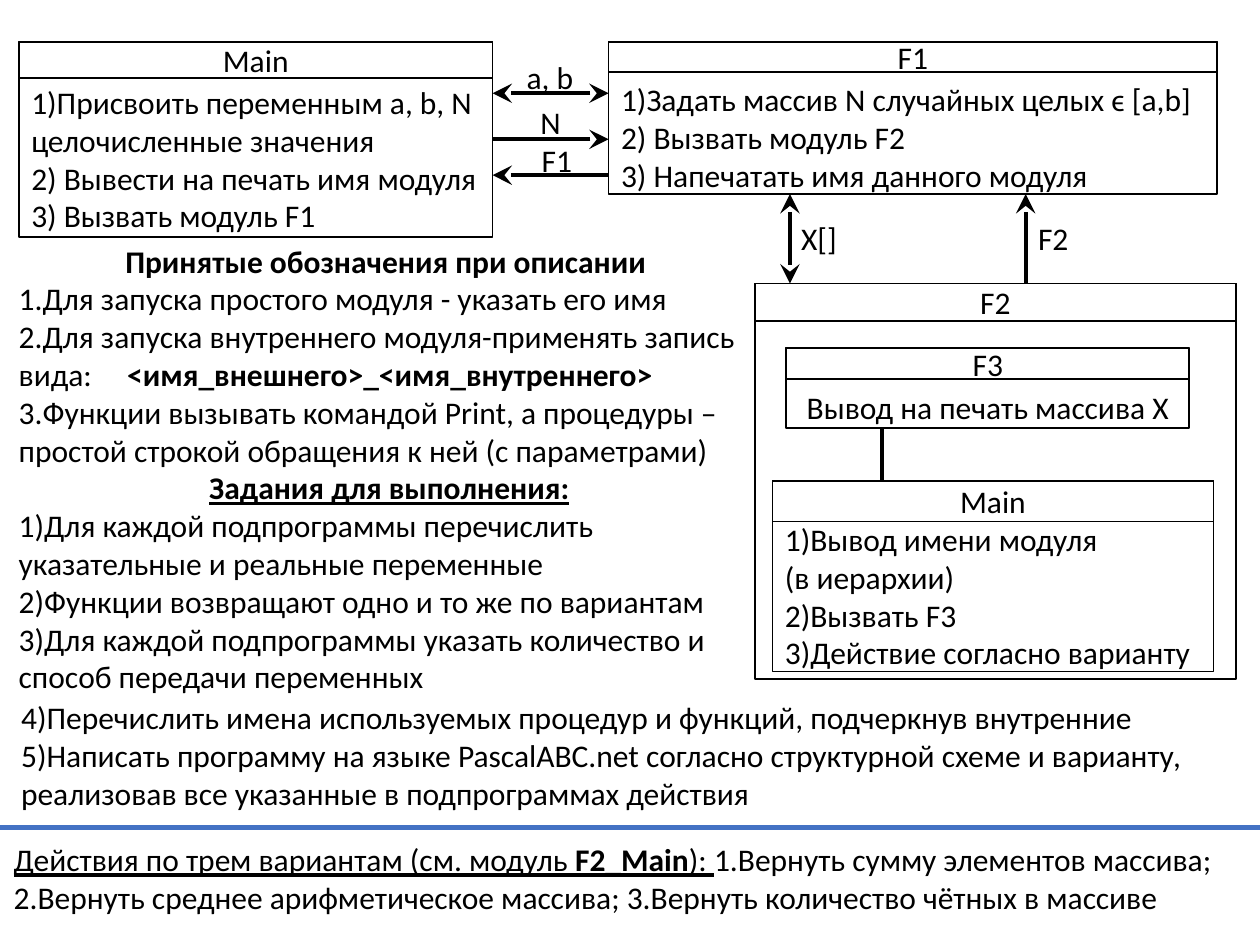
from dataclasses import dataclass

from lxml.etree import SubElement
from pptx import Presentation
from pptx.dml.color import RGBColor
from pptx.enum.shapes import MSO_CONNECTOR as Connector, MSO_SHAPE as Preset
from pptx.enum.text import MSO_ANCHOR as Anchor, MSO_AUTO_SIZE as AutoSize, PP_ALIGN as Align
from pptx.oxml.ns import qn
from pptx.util import Pt

BLACK = RGBColor(0x00, 0x00, 0x00)
BLUE = RGBColor(0x44, 0x72, 0xC4)
FONT = {"name": "Calibri", "size": Pt(18)}
BOLD = {"bold": True}
UNDERLINED = {"underline": True}
LINE_HEIGHT = 22


@dataclass
class Span:
    text: str
    style: dict


@dataclass
class Line:
    spans: list[Span]
    align: Align = Align.LEFT
    tab: float | None = None


@dataclass
class Module:
    title: str
    left: float
    top: float
    width: float
    height: float
    title_height: float
    steps: tuple[str, ...] = ()
    align: Align = Align.LEFT


@dataclass
class Label:
    text: str
    left: float
    top: float
    width: float


@dataclass
class Link:
    start: tuple[float, float]
    end: tuple[float, float]
    head: bool = False
    tail: bool = False
    color: RGBColor = BLACK
    weight: float = 2.25


def plain(text: str, align: Align = Align.LEFT, **style) -> Line:
    return Line([Span(text, style)], align)


def set_all(target, values: dict) -> None:
    for name, value in values.items():
        setattr(target, name, value)


def write(frame, lines: list[Line]) -> None:
    for index, line in enumerate(lines):
        para = frame.add_paragraph() if index else frame.paragraphs[0]
        para.alignment = line.align
        if line.tab:
            stops = SubElement(para._p.get_or_add_pPr(), qn("a:tabLst"))
            SubElement(stops, qn("a:tab"), pos=str(Pt(line.tab)), algn="l")
        for part in line.spans:
            span = para.add_run()
            span.text = part.text
            set_all(span.font, FONT | part.style)
            span.font.color.rgb = BLACK


def draw_rectangle(page, left: float, top: float, width: float, height: float,
                   lines: list[Line], inset: float = 0):
    box = page.shapes.add_shape(Preset.RECTANGLE, Pt(left), Pt(top), Pt(width), Pt(height))
    box.shadow.inherit = False
    box.fill.background()
    box.line.color.rgb = BLACK
    box.line.width = Pt(1)
    set_all(box.text_frame, {"word_wrap": True, "vertical_anchor": Anchor.MIDDLE,
                             "margin_top": Pt(inset), "margin_bottom": 0})
    write(box.text_frame, lines)
    return box


def draw_module(page, module: Module):
    steps = [plain(step, module.align) for step in module.steps]
    box = draw_rectangle(page, module.left, module.top, module.width, module.height,
                         steps, LINE_HEIGHT)
    draw_rectangle(page, module.left, module.top, module.width, module.title_height,
                   [plain(module.title, Align.CENTER)])
    return box


def draw_text(page, left: float, top: float, width: float, height: float,
              lines: list[Line], wrap: bool = True) -> None:
    box = page.shapes.add_textbox(Pt(left), Pt(top), Pt(width), Pt(height))
    set_all(box.text_frame, {"word_wrap": wrap, "auto_size": AutoSize.SHAPE_TO_FIT_TEXT})
    write(box.text_frame, lines)


def draw_link(page, link: Link):
    points = [Pt(value) for value in (*link.start, *link.end)]
    connector = page.shapes.add_connector(Connector.STRAIGHT, *points)
    connector.line.color.rgb = link.color
    connector.line.width = Pt(link.weight)
    outline = connector.line._get_or_add_ln()
    for tag, shown in (("a:headEnd", link.head), ("a:tailEnd", link.tail)):
        if shown:
            SubElement(outline, qn(tag), type="stealth", w="lg", len="lg")
    SubElement(connector._element.spPr, qn("a:effectLst"))
    return connector


MAIN = Module("Main", 10.8, 23.8, 270.7, 111.6, 20.9, (
    "1)Присвоить переменным a, b, N целочисленные значения",
    "2) Вывести на печать имя модуля",
    "3) Вызвать модуль F1"))
F1 = Module("F1", 347.8, 23.8, 347.8, 87.1, 17.3, (
    "1)Задать массив N случайных целых ϵ [a,b]",
    "2) Вызвать модуль F2",
    "3) Напечатать имя данного модуля"))
F2 = Module("F2", 431.3, 162, 275, 226.1, 21.6)
F3 = Module("F3", 449.3, 198.7, 230.4, 46.1, 18,
            ("Вывод на печать массива X",), Align.CENTER)
F2_MAIN = Module("Main", 441.4, 275, 252, 108.7, 23, (
    "1)Вывод имени модуля",
    "(в иерархии)",
    "2)Вызвать F3",
    "3)Действие согласно варианту"))

MAIN_RIGHT = MAIN.left + MAIN.width
MAIN_MIDDLE = MAIN.top + MAIN.height / 2
F1_BOTTOM = F1.top + F1.height
RETURN_LINK = Link((F1.left, MAIN_MIDDLE), (MAIN_RIGHT, MAIN_MIDDLE), head=True)
LINKS = [
    Link((504, F3.top + F3.height), (504, F2_MAIN.top)),
    Link((451.4, F1_BOTTOM), (451.4, F2.top), head=True, tail=True),
    Link((586.1, F1_BOTTOM), (586.1, F2.top), head=True),
    Link((F1.left, 53.3), (MAIN_RIGHT, 53.3), head=True, tail=True),
    Link((MAIN_RIGHT, 100.1), (F1.left, 100.1), head=True),
    Link((0, 473), (720, 473), color=BLUE, weight=3),
]
LABELS = [
    Label("F2", 586.1, 121.7, 32.4),
    Label("a, b", 293.8, 29.5, 41.8),
    Label("N", 301.7, 55.4, 25.9),
    Label("F1", 302.4, 77, 32.4),
    Label("X[]", 450.7, 121.7, 35.3),
]
RULES = [
    plain("Принятые обозначения при описании ", Align.CENTER, **BOLD),
    plain("1.Для запуска простого модуля - указать его имя"),
    Line([Span("2.Для запуска внутреннего модуля-применять запись вида:\t", {}),
          Span("<имя_внешнего>_<имя_внутреннего>", BOLD)], tab=62),
    plain("3.Функции вызывать командой Print, а процедуры – "
          "простой строкой обращения к ней (с параметрами)"),
    plain("Задания для выполнения:", Align.CENTER, **BOLD, **UNDERLINED),
    plain("1)Для каждой подпрограммы перечислить указательные и реальные переменные"),
    plain("2)Функции возвращают одно и то же по вариантам"),
    plain("3)Для каждой подпрограммы указать количество и способ передачи переменных"),
]
TASKS = [
    plain("4)Перечислить имена используемых процедур и функций, подчеркнув внутренние"),
    plain("5)Написать программу на языке PascalABC.net согласно структурной схеме "
          "и варианту, реализовав все указанные в подпрограммах действия"),
]
VARIANTS = [Line([
    Span("Действия по трем вариантам (см. модуль ", UNDERLINED),
    Span("F2_Main", BOLD | UNDERLINED),
    Span("): ", UNDERLINED),
    Span("1.Вернуть сумму элементов массива; 2.Вернуть среднее арифметическое массива; "
         "3.Вернуть количество чётных в массиве", {}),
])]


def main() -> None:
    deck = Presentation()
    set_all(deck, {"slide_width": Pt(720), "slide_height": Pt(540)})
    page = deck.slides.add_slide(deck.slide_layouts[6])
    main_box = draw_module(page, MAIN)
    for module in (F1, F2, F3, F2_MAIN):
        draw_module(page, module)
    draw_link(page, RETURN_LINK).end_connect(main_box, 3)
    for link in LINKS:
        draw_link(page, link)
    for label in LABELS:
        draw_text(page, label.left, label.top, label.width, 28.8, [plain(label.text)], wrap=False)
    draw_text(page, 3.6, 134.6, 437.8, 269.3, RULES)
    draw_text(page, 5, 395.3, 705.6, 72.7, TASKS)
    draw_text(page, 0.7, 476.6, 714.2, 51.1, VARIANTS)
    deck.save("out.pptx")


if __name__ == "__main__":
    main()
